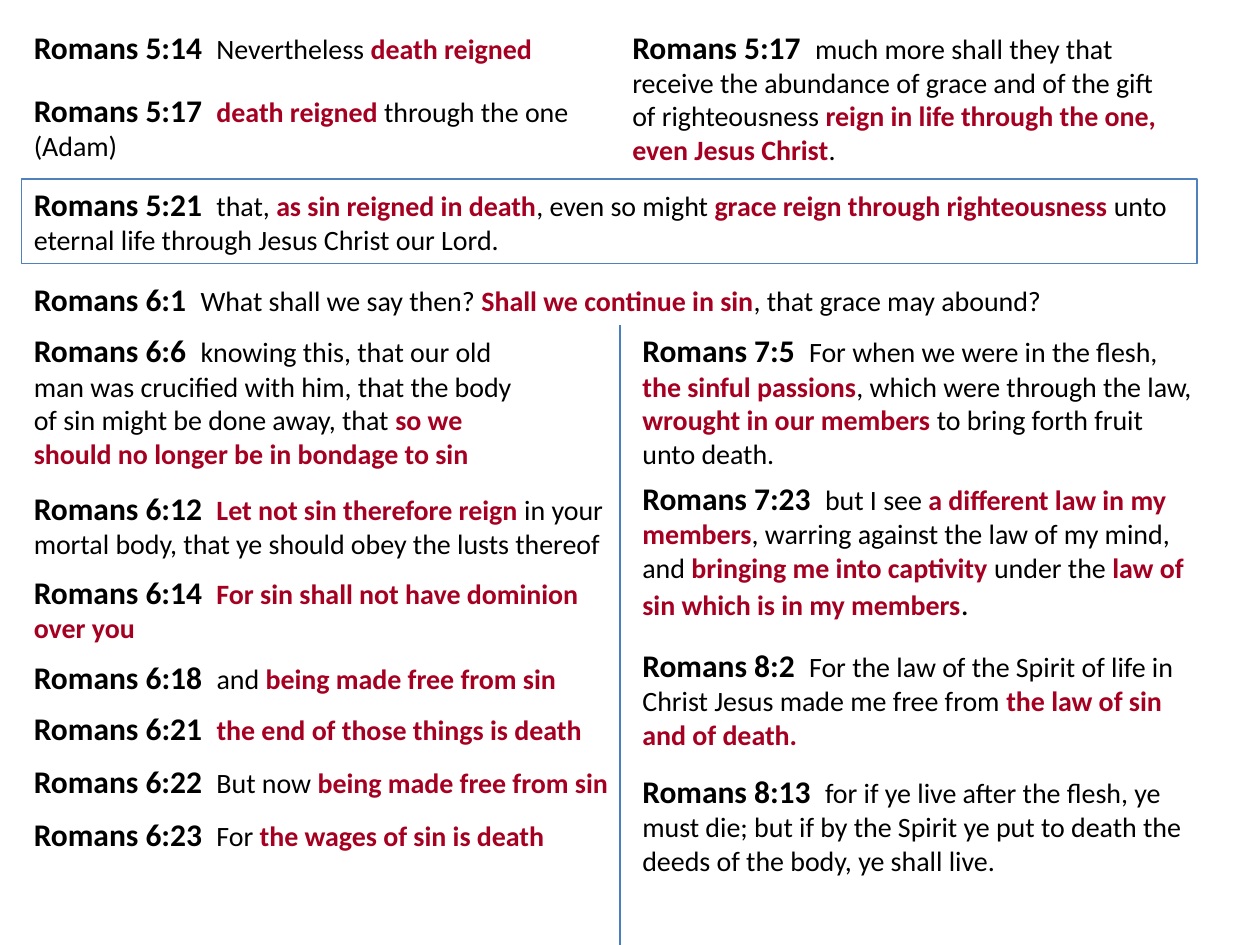
from lxml.etree import SubElement
from pptx import Presentation
from pptx.dml.color import RGBColor
from pptx.enum.shapes import MSO_CONNECTOR, MSO_SHAPE
from pptx.enum.text import MSO_ANCHOR, MSO_AUTO_SIZE, PP_ALIGN
from pptx.oxml.ns import qn
from pptx.util import Inches, Pt

COLORS = {"text": "000000", "emphasis": "A50021", "frame": "4F81BD", "divider": "4B7EBC"}
LEFT = 0.17
RIGHT = 5
FRAMED = "Romans 5:21"
UNWRAPPED = ("Romans 5:14", "Romans 6:23")

PASSAGES = [
    (LEFT, 0.17, 4.2, 0.4, "Romans 5:14", "Nevertheless |death reigned"),
    (LEFT, 0.67, 4.5, 0.67, "Romans 5:17", "|death reigned |through the one (Adam)"),
    (4.92, 0.17, 4.42, 1.21, "Romans 5:17",
     "much more shall they that receive the abundance of grace and of the gift of righteousness "
     "|reign in life through the one, even Jesus Christ|."),
    (LEFT, 1.42, 9.33, 0.67, FRAMED,
     "that, |as sin reigned in death|, even so might |grace reign through righteousness "
     "|unto eternal life through Jesus Christ our Lord."),
    (LEFT, 2.17, 9.33, 0.4, "Romans 6:1",
     "What shall we say then? |Shall we continue in sin|, that grace may abound?"),
    (LEFT, 2.58, 4.17, 1.21, "Romans 6:6",
     "knowing this, that our old man was crucified with him, that the body of sin might be "
     "done away, that |so we should no longer be in bondage to sin"),
    (LEFT, 3.83, 5, 0.67, "Romans 6:12",
     "|Let not sin therefore reign |in your mortal body, that ye should obey the lusts thereof"),
    (LEFT, 4.5, 4.83, 0.67, "Romans 6:14", "|For sin shall not have dominion over you"),
    (LEFT, 5.17, 4.39, 0.4, "Romans 6:18", "and |being made free from sin"),
    (LEFT, 5.58, 4.58, 0.4, "Romans 6:21", "|the end of those things is death"),
    (LEFT, 6, 5, 0.4, "Romans 6:22", "But now |being made free from sin"),
    (LEFT, 6.42, 4.3, 0.4, "Romans 6:23", "For |the wages of sin is death"),
    (RIGHT, 2.58, 4.58, 1.21, "Romans 7:5",
     "For when we were in the flesh, |the sinful passions|, which were through the law, "
     "|wrought in our members |to bring forth fruit unto death."),
    (RIGHT, 3.75, 4.5, 1.25, "Romans 7:23",
     "but I see |a different law in my members|, warring against the law of my mind, and "
     "|bringing me into captivity |under the |law of sin which is in my members|."),
    (RIGHT, 5.08, 4.58, 0.94, "Romans 8:2",
     "For the law of the Spirit of life in Christ Jesus made me free from "
     "|the law of sin and of death."),
    (RIGHT, 6.08, 4.5, 0.94, "Romans 8:13",
     "for if ye live after the flesh, ye must die; but if by the Spirit ye put to death "
     "the deeds of the body, ye shall live."),
]


def add_run(paragraph, text, size, color, bold):
    run = paragraph.add_run()
    run.text = text
    run.font.name = "Calibri"
    run.font.size = Pt(size)
    run.font.bold = bold
    run.font.color.rgb = RGBColor.from_string(COLORS[color])
    return run


presentation = Presentation()
presentation.slide_width = Inches(10)
presentation.slide_height = Inches(7.5)
slide = presentation.slides.add_slide(presentation.slide_layouts[6])

for left, top, width, height, reference, verse in PASSAGES:
    bounds = [Inches(length) for length in (left, top, width, height)]
    if reference == FRAMED:
        shape = slide.shapes.add_shape(MSO_SHAPE.RECTANGLE, *bounds)
        shape.shadow.inherit = False
        shape.fill.background()
        shape.line.color.rgb = RGBColor.from_string(COLORS["frame"])
        shape.line.width = Pt(0.75)
    else:
        shape = slide.shapes.add_textbox(*bounds)
    frame = shape.text_frame
    frame.word_wrap = reference not in UNWRAPPED
    frame.auto_size = MSO_AUTO_SIZE.SHAPE_TO_FIT_TEXT
    frame.vertical_anchor = MSO_ANCHOR.TOP
    paragraph = frame.paragraphs[0]
    paragraph.alignment = PP_ALIGN.LEFT
    add_run(paragraph, reference + "  ", 18, "text", True)
    for index, part in enumerate(verse.split("|")):
        emphasized = index % 2 == 1
        if part:
            run = add_run(paragraph, part, 16, "emphasis" if emphasized else "text", emphasized)
    if reference == "Romans 7:23":
        run.font.size = Pt(18)

divider = slide.shapes.add_connector(
    MSO_CONNECTOR.STRAIGHT, Inches(4.92), Inches(2.58), Inches(4.92), Inches(8.17))
divider.line.color.rgb = RGBColor.from_string(COLORS["divider"])
divider.line.width = Pt(0.75)
SubElement(divider.element.spPr, qn("a:effectLst"))

presentation.save("out.pptx")
